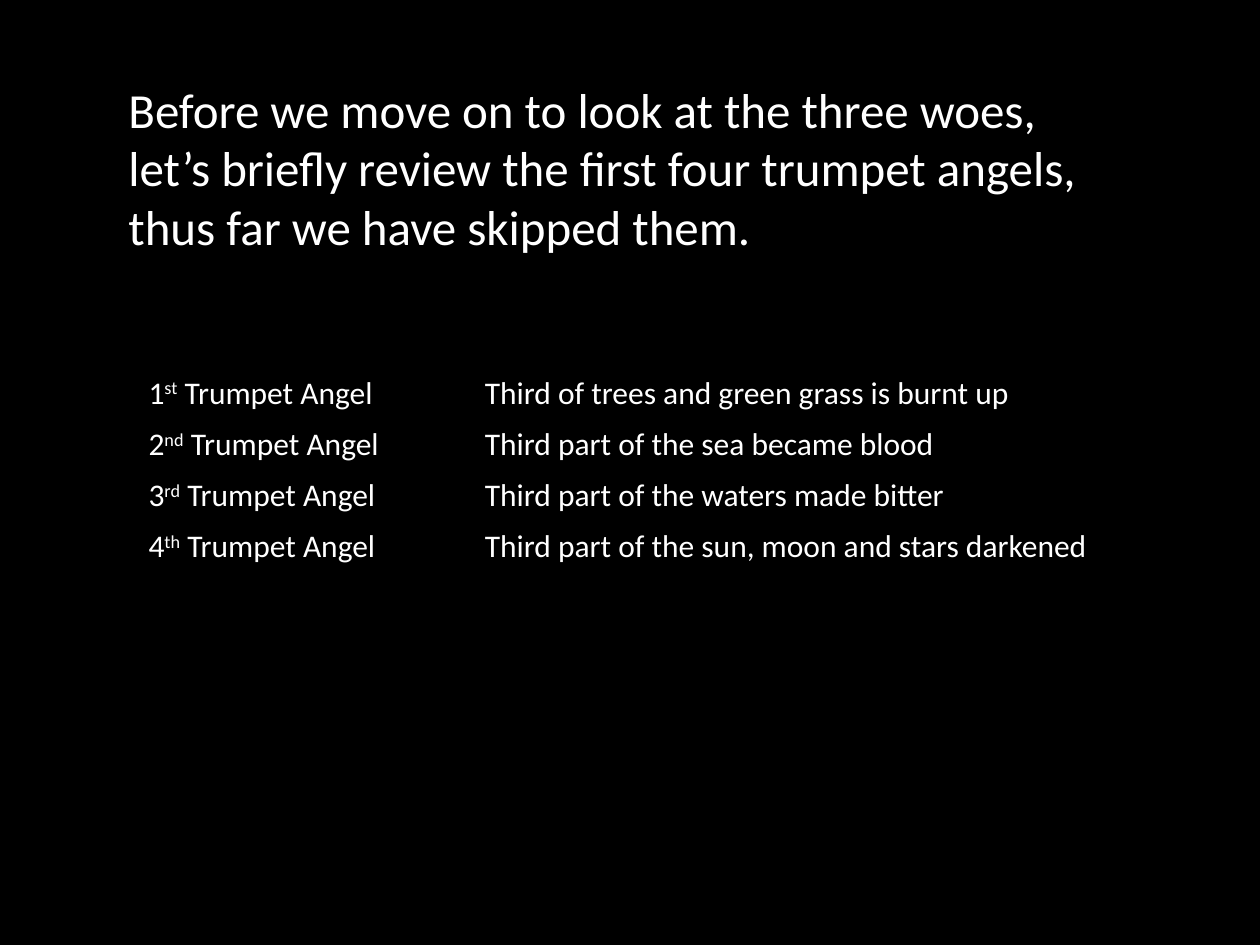
import pptx
import pptx.dml.color
import pptx.util

Cm = pptx.util.Cm
Pt = pptx.util.Pt

BLACK = pptx.dml.color.RGBColor(0x00, 0x00, 0x00)
WHITE = pptx.dml.color.RGBColor(0xFF, 0xFF, 0xFF)

INTRO = ("Before we move on to look at the three woes, let’s briefly review "
         "the first four trumpet angels, thus far we have skipped them.")
TRUMPETS = [
    ("1", "st", "Third of trees and green grass is burnt up"),
    ("2", "nd", "Third part of the sea became blood"),
    ("3", "rd", "Third part of the waters made bitter"),
    ("4", "th", "Third part of the sun, moon and stars darkened"),
]


class SlideBuilder:
    def __init__(self, slide, font="Calibri", color=WHITE):
        self.slide = slide
        self.font = font
        self.color = color

    def background(self, color):
        fill = self.slide.background.fill
        fill.solid()
        fill.fore_color.rgb = color

    def format_runs(self, p, size):
        for r in p.runs:
            r.font.name = self.font
            r.font.size = Pt(size)
            r.font.color.rgb = self.color

    def text(self, text, left, top, width, height, size):
        sp = self.slide.shapes.add_textbox(Cm(left), Cm(top), Cm(width), Cm(height))
        tf = sp.text_frame
        tf.word_wrap = True
        tf.text = text
        self.format_runs(tf.paragraphs[0], size)

    def table(self, rows, left, top, col_widths, row_height, size):
        """Add an unfilled table; each cell is a list of (text, is_superscript)."""
        frame = self.slide.shapes.add_table(
            len(rows), len(col_widths), Cm(left), Cm(top),
            Cm(sum(col_widths)), Cm(row_height * len(rows)))
        table = frame.table
        table.first_row = table.horz_banding = False
        for column, width in zip(table.columns, col_widths):
            column.width = Cm(width)
        for i, row in enumerate(rows):
            for j, parts in enumerate(row):
                cell = table.cell(i, j)
                cell.fill.solid()
                cell.fill.fore_color.rgb = BLACK
                self.clear_borders(cell)
                p = cell.text_frame.paragraphs[0]
                for text, superscript in parts:
                    r = p.add_run()
                    r.text = text
                    if superscript:
                        r._r.get_or_add_rPr().set("baseline", "30000")
                self.format_runs(p, size)

    def clear_borders(self, cell):
        tc_pr = cell._tc.get_or_add_tcPr()
        for i, side in enumerate(("lnL", "lnR", "lnT", "lnB")):
            line = pptx.oxml.parse_xml(
                f'<a:{side} xmlns:a="http://schemas.openxmlformats.org/drawingml/2006/main">'
                f"<a:noFill/></a:{side}>")
            tc_pr.insert(i, line)


def main():
    prs = pptx.Presentation()
    prs.slide_width, prs.slide_height = Cm(25.4), Cm(19.05)
    blank = prs.slide_layouts[6]
    s = SlideBuilder(prs.slides.add_slide(blank))
    s.background(BLACK)
    s.text(INTRO, 2.34, 1.47, 19.69, 3.84, size=28)
    rows = [
        ([(number, False), (suffix, True), (" Trumpet Angel", False)],
         [(event, False)])
        for number, suffix, event in TRUMPETS
    ]
    s.table(rows, 2.74, 7.42, col_widths=(6.78, 13.82), row_height=1.03, size=18)
    prs.save("out.pptx")


if __name__ == "__main__":
    main()
